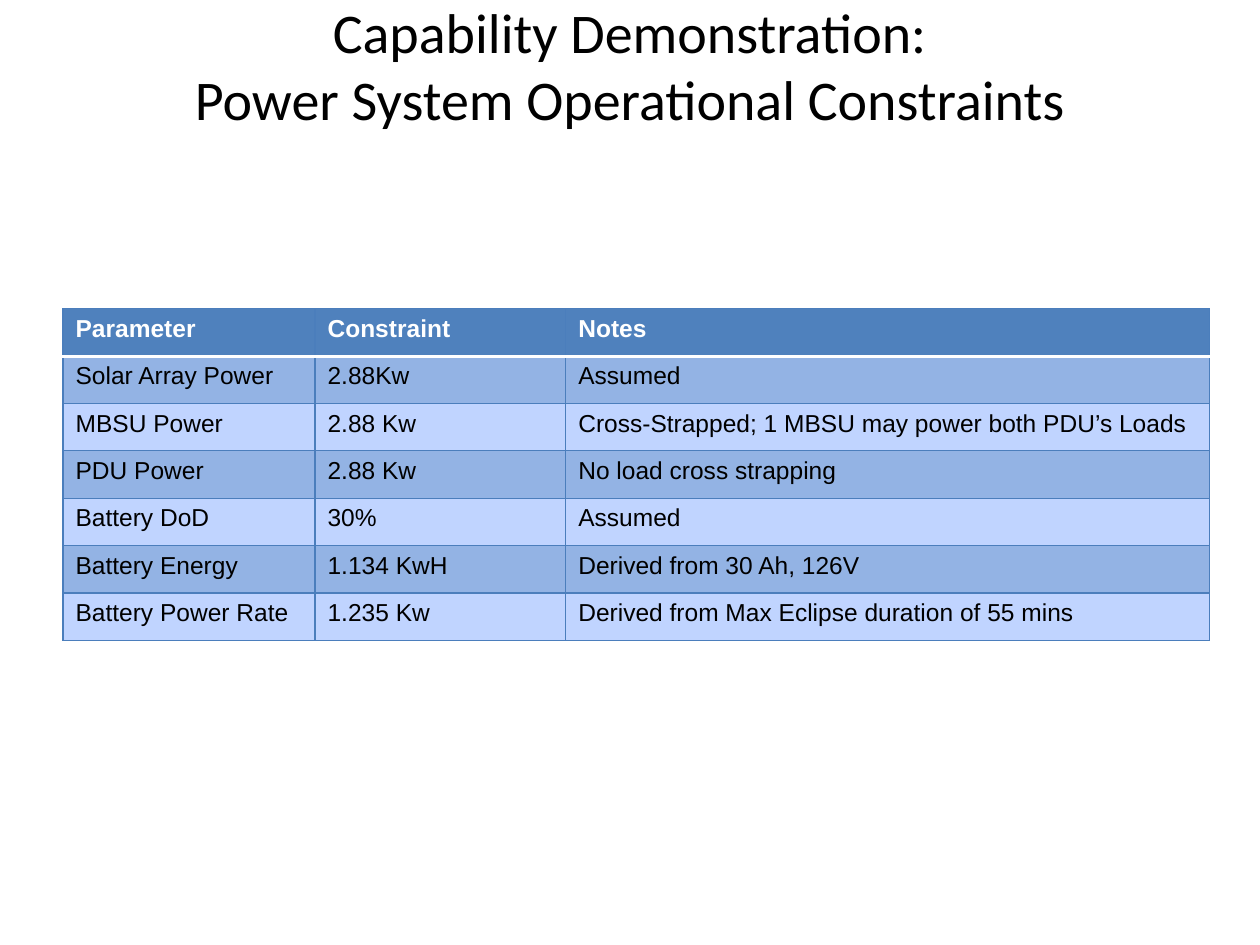
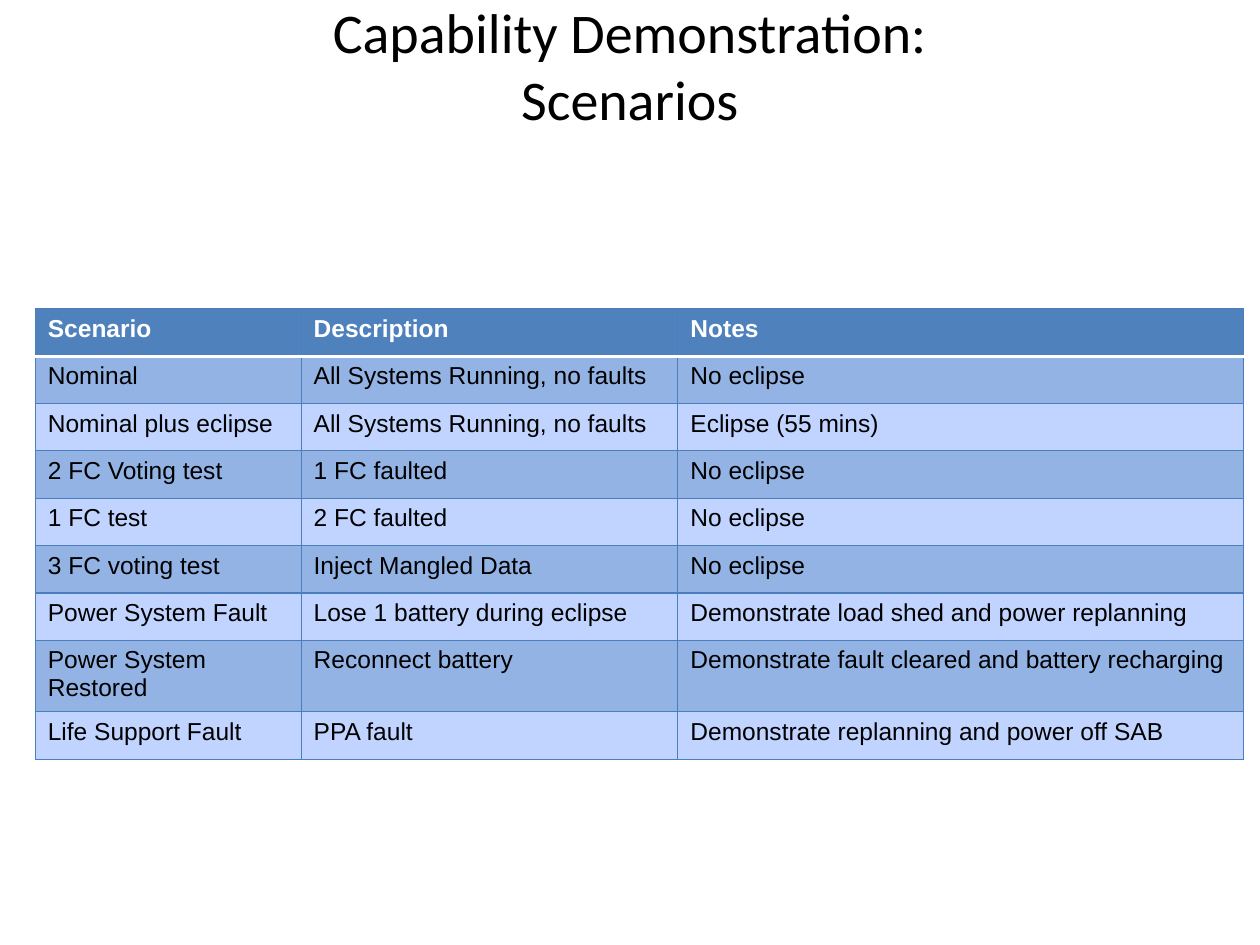
from pptx import Presentation
from pptx.dml.color import RGBColor
from pptx.enum.text import MSO_ANCHOR, PP_ALIGN
from pptx.oxml.ns import qn
from pptx.util import Inches, Pt
from lxml.etree import SubElement

COLORS = {
    "text": "000000",
    "header": "4F81BD",
    "header_text": "FFFFFF",
    "band_dark": "93B3E4",
    "band_light": "C0D4FF",
    "border": "4B7EBC",
    "header_rule": "FFFFFF",
}
TITLE_PREFIX = "Capability Demonstration:"
TABLE_TOP = 2.45
ROW_HEIGHT = 0.376

SLIDES = [
    {
        "topic": "Power System Operational Constraints",
        "left": 0.5,
        "columns": [2, 1.99, 5.11],
        "rows": [
            ("Parameter", "Constraint", "Notes"),
            ("Solar Array Power", "2.88Kw", "Assumed"),
            ("MBSU Power", "2.88 Kw", "Cross-Strapped; 1 MBSU may power both PDU’s Loads"),
            ("PDU Power", "2.88 Kw", "No load cross strapping"),
            ("Battery DoD", "30%", "Assumed"),
            ("Battery Energy", "1.134 KwH", "Derived from 30 Ah, 126V"),
            ("Battery Power Rate", "1.235 Kw", "Derived from Max Eclipse duration of 55 mins"),
        ],
    },
    {
        "topic": "Scenarios",
        "left": 0.28,
        "columns": [2.11, 2.99, 4.49],
        "rows": [
            ("Scenario", "Description", "Notes"),
            ("Nominal", "All Systems Running, no faults", "No eclipse"),
            ("Nominal plus eclipse", "All Systems Running, no faults", "Eclipse (55 mins)"),
            ("2 FC Voting test", "1 FC faulted", "No eclipse"),
            ("1 FC test", "2 FC faulted", "No eclipse"),
            ("3 FC voting test", "Inject Mangled Data", "No eclipse"),
            ("Power System Fault", "Lose 1 battery during eclipse", "Demonstrate load shed and power replanning"),
            ("Power System Restored", "Reconnect battery", "Demonstrate fault cleared and battery recharging"),
            ("Life Support Fault", "PPA fault", "Demonstrate replanning and power off SAB"),
        ],
    },
]


def style_font(paragraph, face, size, color, bold=False):
    paragraph.font.name = face
    paragraph.font.size = Pt(size)
    paragraph.font.bold = bold
    paragraph.font.color.rgb = RGBColor.from_string(COLORS[color])


def add_title(slide, topic):
    frame = slide.shapes.add_textbox(Inches(0.5), Inches(0.1), Inches(9), Inches(0.82)).text_frame
    frame.word_wrap = True
    frame.vertical_anchor = MSO_ANCHOR.MIDDLE
    heading = frame.paragraphs[0]
    heading.text = f"{TITLE_PREFIX}\v{topic}"
    heading.alignment = PP_ALIGN.CENTER
    style_font(heading, "Calibri", 32, "text")


def add_border(cell, side, color, width):
    line = SubElement(cell._tc.get_or_add_tcPr(), qn(f"a:{side}"), w=str(Pt(width)))
    fill = SubElement(line, qn("a:solidFill"))
    SubElement(fill, qn("a:srgbClr"), val=COLORS[color])


def style_cell(cell, row):
    rule_side = {0: "lnB", 1: "lnT"}.get(row)
    for side in ("lnL", "lnR", "lnT", "lnB"):
        if side == rule_side:
            add_border(cell, side, "header_rule", 2)
        else:
            add_border(cell, side, "border", 0.75)
    band = "header" if row == 0 else "band_dark" if row % 2 else "band_light"
    cell.fill.solid()
    cell.fill.fore_color.rgb = RGBColor.from_string(COLORS[band])
    style_font(cell.text_frame.paragraphs[0], "Arial", 14,
               "text" if row else "header_text", bold=row == 0)


def add_grid(slide, left, columns, rows):
    grid = slide.shapes.add_table(
        len(rows), len(columns), Inches(left), Inches(TABLE_TOP),
        Inches(sum(columns)), Inches(ROW_HEIGHT * len(rows))).table
    for column, width in zip(grid.columns, columns):
        column.width = Inches(width)
    for r, entries in enumerate(rows):
        for c, entry in enumerate(entries):
            cell = grid.cell(r, c)
            cell.text = entry
            style_cell(cell, r)


def main():
    deck = Presentation()
    deck.slide_width, deck.slide_height = Inches(10), Inches(7.5)
    for content in SLIDES:
        slide = deck.slides.add_slide(deck.slide_layouts[6])
        add_title(slide, content["topic"])
        add_grid(slide, content["left"], content["columns"], content["rows"])
    deck.save("out.pptx")


if __name__ == "__main__":
    main()
